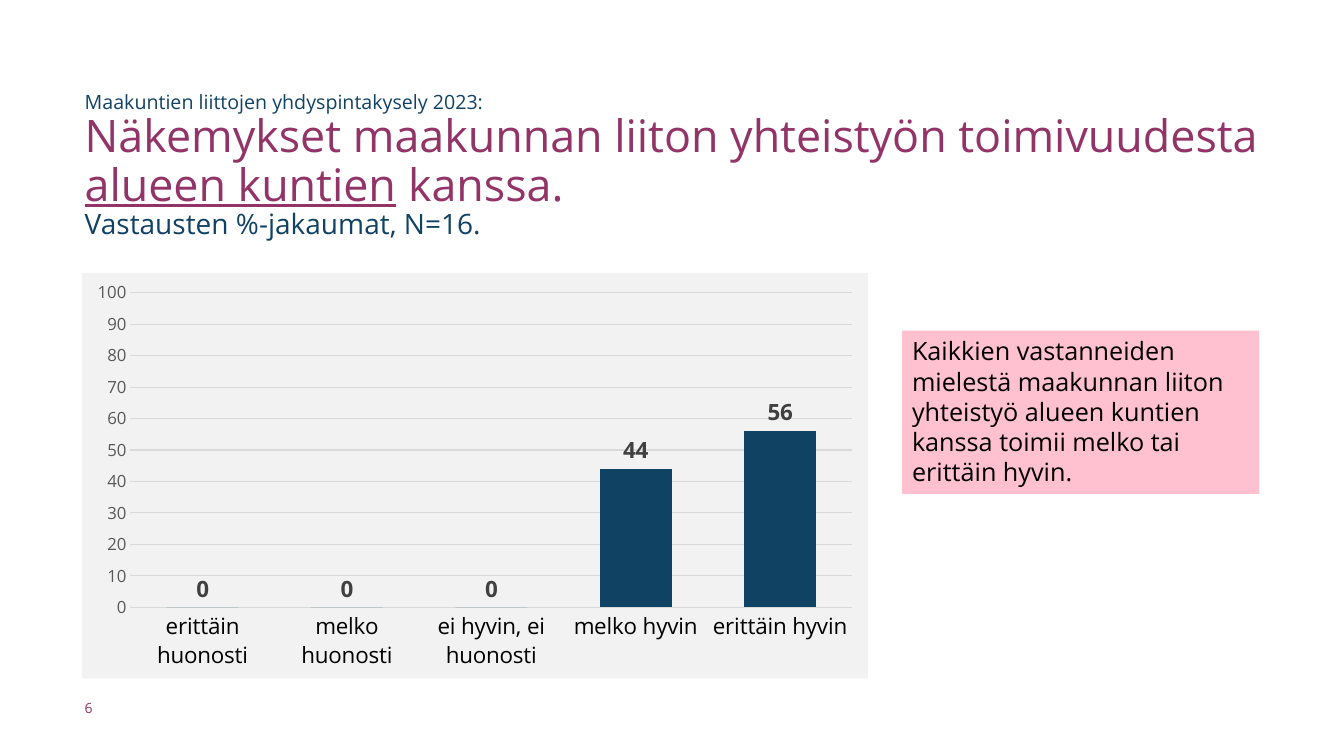
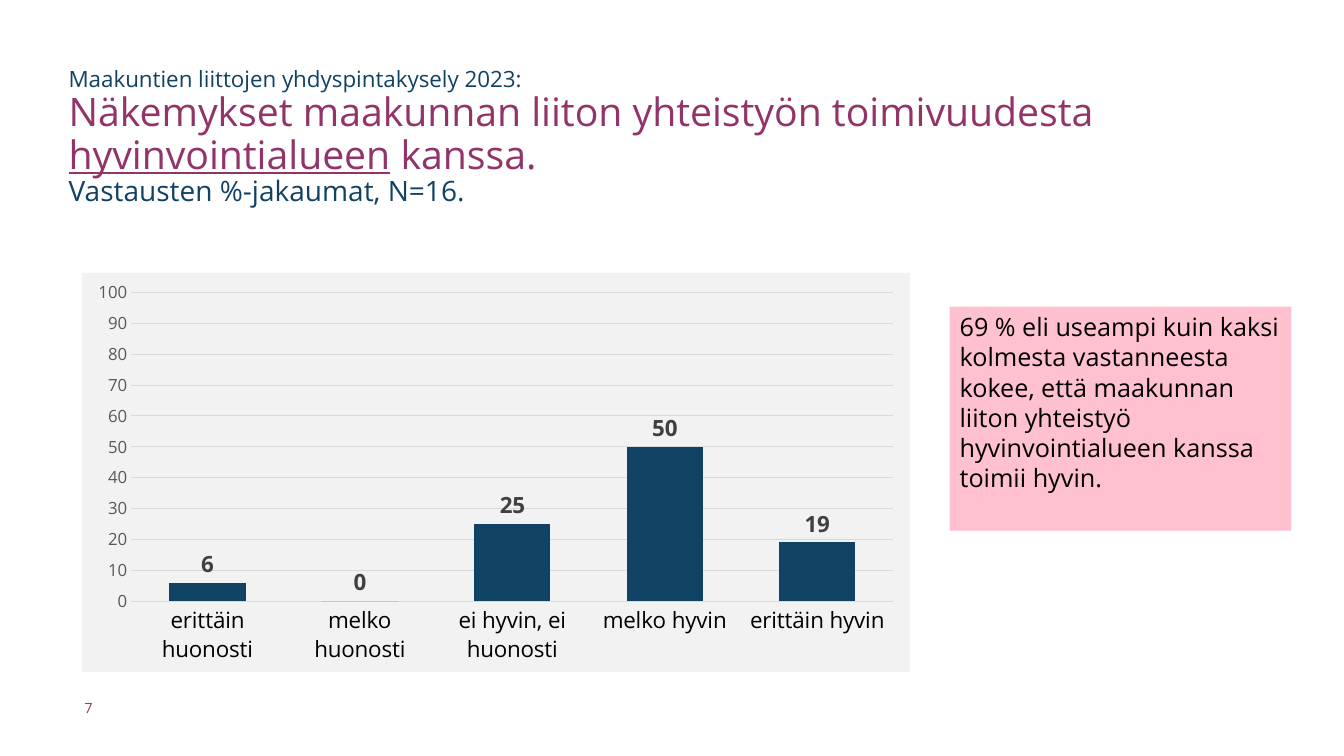
from dataclasses import dataclass
from lxml import etree
from pptx import Presentation
from pptx.chart.data import CategoryChartData
from pptx.dml.color import RGBColor
from pptx.enum.chart import XL_CHART_TYPE, XL_LABEL_POSITION, XL_TICK_MARK
from pptx.enum.shapes import MSO_SHAPE
from pptx.enum.text import MSO_ANCHOR, PP_ALIGN
from pptx.oxml import parse_xml
from pptx.oxml.ns import nsdecls, qn
from pptx.util import Pt

COLUMN = XL_CHART_TYPE.COLUMN_CLUSTERED
OUTSIDE = XL_LABEL_POSITION.OUTSIDE_END
NO_TICK = XL_TICK_MARK.NONE
RECT = MSO_SHAPE.RECTANGLE
TOP, MIDDLE = MSO_ANCHOR.TOP, MSO_ANCHOR.MIDDLE
LEFT = PP_ALIGN.LEFT


@dataclass(frozen=True)
class Theme:
    face: str = "Open Sans"
    navy: str = "104264"
    plum: str = "923468"
    pink: str = "FFC0D0"
    panel: str = "F2F2F2"
    grid: str = "D9D9D9"
    scale: str = "595959"
    label: str = "404040"
    black: str = "000000"
    small: int = 10
    tick: int = 12
    text: int = 16
    note: int = 18
    sub: int = 20


theme = Theme()


def style(font, size, color, bold=False):
    font.name, font.size, font.bold = theme.face, Pt(size), bold
    font.color.rgb = RGBColor.from_string(color)


def add_text(slide, box, anchor):
    frame = slide.shapes.add_textbox(*map(Pt, box)).text_frame
    frame.word_wrap = True
    frame.vertical_anchor = anchor
    frame.margin_left = frame.margin_right = 0
    frame.margin_top = frame.margin_bottom = 0
    return frame


# Content
LEAD = "Maakuntien liittojen yhdyspintakysely 2023:"
HEAD = "Näkemykset maakunnan liiton yhteistyön toimivuudesta "
BASE = "Vastausten %-jakaumat, N=16."
CATS = ["erittäin huonosti", "melko huonosti", "ei hyvin, ei huonosti",
        "melko hyvin", "erittäin hyvin"]
PAGES = [
    dict(number=6, topic="alueen kuntien", lead=14, head=32,
         title=(60.5, 66.2, 839.5, 79), chart=(58.5, 195, 561.5, 289.5),
         values=(0, 0, 0, 44, 56), box=(644.4, 236.2, 255, 116.6),
         note="Kaikkien vastanneiden\nmielestä maakunnan liiton yhteistyö "
              "alueen kuntien kanssa toimii melko tai erittäin hyvin."),
    dict(number=7, topic="hyvinvointialueen", lead=16, head=28,
         title=(49, 49, 811, 79), chart=(58.5, 195, 591.5, 285),
         values=(6, 0, 25, 50, 19), box=(678.4, 219, 244, 160),
         note="69 % eli useampi kuin kaksi kolmesta vastanneesta kokee, että "
              "maakunnan liiton yhteistyö hyvinvointialueen kanssa toimii "
              "hyvin."),
]

deck = Presentation()
deck.slide_width, deck.slide_height = Pt(960), Pt(540)

for page in PAGES:
    slide = deck.slides.add_slide(deck.slide_layouts[6])

    # Title in three lines, with the topic underlined
    frame = add_text(slide, page["title"], TOP)
    frame.text = "\n".join([LEAD, HEAD, BASE])
    lead, head, base = frame.paragraphs
    for part in (page["topic"], " kanssa."):
        head.add_run().text = part
    head.runs[1].font.underline = True
    for para, size, color in ((lead, page["lead"], theme.navy),
                              (head, page["head"], theme.plum),
                              (base, theme.sub, theme.navy)):
        para.line_spacing = 0.9
        for run in para.runs:
            style(run.font, size, color)

    # Column chart on a grey panel
    data = CategoryChartData()
    data.categories = CATS
    data.add_series("Series 1", page["values"])
    chart = slide.shapes.add_chart(COLUMN, *map(Pt, page["chart"]), data).chart
    chart.has_legend = chart.has_title = False
    style(chart.font, theme.small, theme.black)
    panel = parse_xml(
        f'<c:spPr {nsdecls("c", "a")}><a:solidFill>'
        f'<a:srgbClr val="{theme.panel}"/></a:solidFill>'
        '<a:ln><a:noFill/></a:ln></c:spPr>')
    chart.element.find(qn("c:chart")).addnext(panel)

    # Axes
    cat, val = chart.category_axis, chart.value_axis
    for axis, size, color in ((cat, theme.text, theme.black),
                              (val, theme.tick, theme.scale)):
        axis.major_tick_mark = axis.minor_tick_mark = NO_TICK
        style(axis.tick_labels.font, size, color)
    val.minimum_scale, val.maximum_scale, val.major_unit = 0, 100, 10
    val.format.line.fill.background()
    for line in (cat.format.line, val.major_gridlines.format.line):
        line.width = Pt(0.75)
        line.color.rgb = RGBColor.from_string(theme.grid)

    # Columns and their values
    plot = chart.plots[0]
    plot.gap_width, plot.overlap = 100, -27
    plot.vary_by_categories = False
    fill = plot.series[0].format.fill
    fill.solid()
    fill.fore_color.rgb = RGBColor.from_string(theme.navy)
    labels = plot.series[0].data_labels
    labels.show_value = True
    labels.position = OUTSIDE
    style(labels.font, theme.text, theme.label, bold=True)

    # Slide number
    frame = add_text(slide, (60.5, 497, 34, 17), MIDDLE)
    frame.text = str(page["number"])
    style(frame.paragraphs[0].runs[0].font, theme.small, theme.plum)

    # Pink note
    note = slide.shapes.add_shape(RECT, *map(Pt, page["box"]))
    note.shadow.inherit = False
    note.fill.solid()
    note.fill.fore_color.rgb = RGBColor.from_string(theme.pink)
    note.line.fill.background()
    frame = note.text_frame
    frame.word_wrap = True
    frame.vertical_anchor = TOP
    frame.text = page["note"]
    for para in frame.paragraphs:
        para.alignment = LEFT
        style(para.runs[0].font, theme.note, theme.black)

deck.save("out.pptx")
